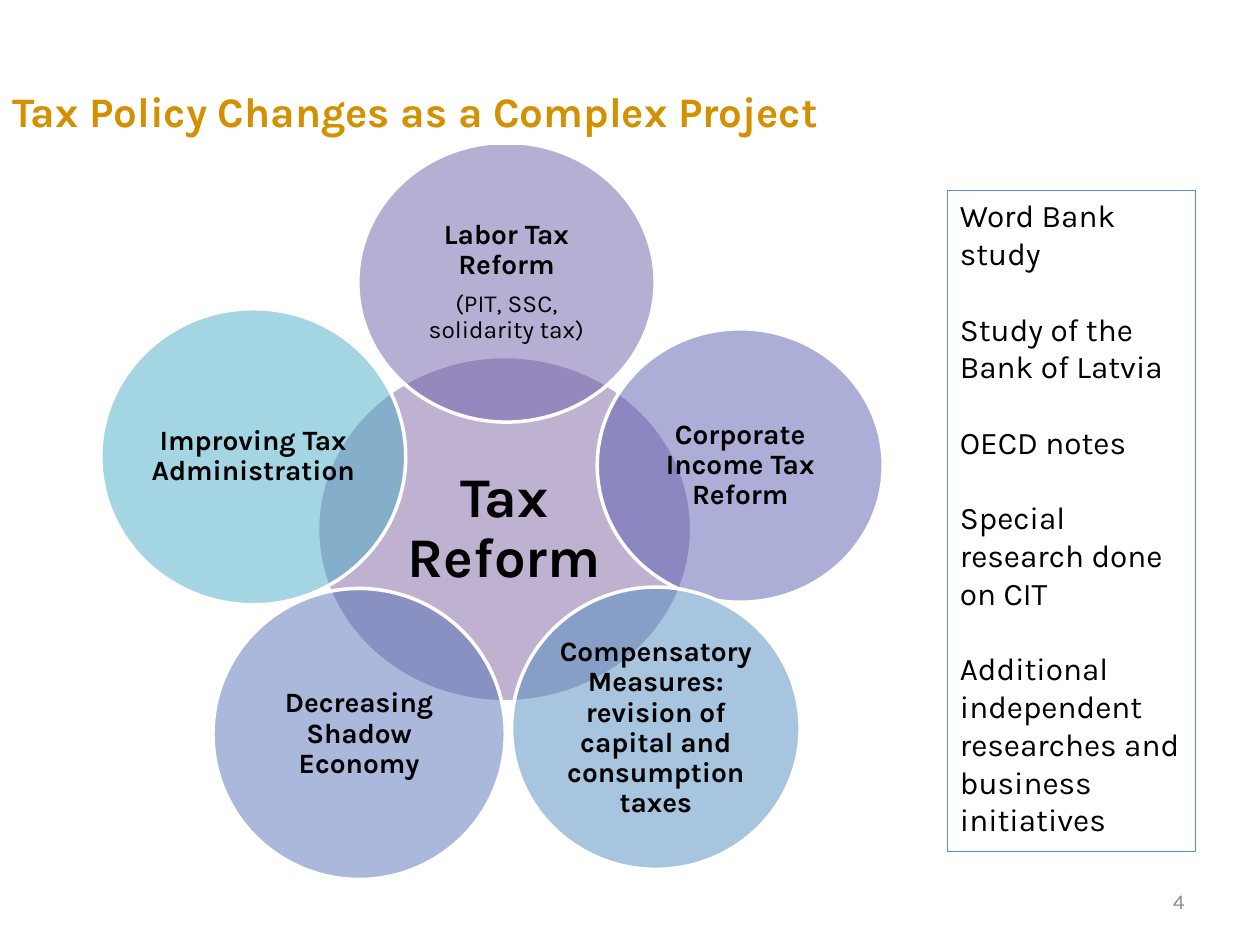
from dataclasses import dataclass

from pptx import Presentation, util as u
from pptx.dml.color import RGBColor
from pptx.enum import shapes, text
from pptx.oxml.ns import qn
from lxml import etree


@dataclass(frozen=True)
class Theme:
    font: str = "Karla"
    black: str = "000000"
    white: str = "FFFFFF"
    gold: str = "D39001"
    grey: str = "8C8C8C"
    border: str = "558ED5"
    title_size: int = 24
    center_size: int = 32
    petal_size: int = 16
    detail_size: int = 14
    sidebar_size: int = 18
    number_size: int = 12


theme = Theme()
LEFT, CENTER, RIGHT = text.PP_ALIGN.LEFT, text.PP_ALIGN.CENTER, text.PP_ALIGN.RIGHT
MIDDLE = text.MSO_ANCHOR.MIDDLE


def write(shape, lines, color, frame_format, paragraph_format):
    """Fill a shape with (wording, size, bold) lines."""
    frame = shape.text_frame
    for name, value in {"word_wrap": True, **frame_format}.items():
        setattr(frame, name, value)
    for index, (wording, size, bold) in enumerate(lines):
        paragraph = frame.paragraphs[0] if index == 0 else frame.add_paragraph()
        paragraph.text = wording
        for name, value in paragraph_format.items():
            if index or name != "space_before":
                setattr(paragraph, name, value)
        font_format = {"name": theme.font, "size": u.Pt(size), "bold": bold}
        for name, value in font_format.items():
            setattr(paragraph.font, name, value)
        paragraph.font.color.rgb = RGBColor.from_string(color)


def add_circle(group, place, color, lines, inset):
    """Add a half-transparent ellipse with centred text."""
    circle = group.shapes.add_shape(shapes.MSO_SHAPE.OVAL, *map(u.Inches, place))
    circle.shadow.inherit = False
    circle.fill.solid()
    circle.fill.fore_color.rgb = RGBColor.from_string(color)
    fill_color = circle.fill._xPr.find(qn("a:solidFill"))[0]
    etree.SubElement(fill_color, qn("a:alpha")).set("val", "50000")
    circle.line.color.rgb = RGBColor.from_string(theme.white)
    circle.line.width = u.Pt(2)
    sides = ("margin_left", "margin_top", "margin_right", "margin_bottom")
    frame_format = {"vertical_anchor": MIDDLE, **dict.fromkeys(sides, u.Inches(inset))}
    write(circle, lines, color=theme.black, frame_format=frame_format,
          paragraph_format={"alignment": CENTER, "line_spacing": 0.9, "space_after": u.Pt(5.6)})


presentation = Presentation()
presentation.slide_width, presentation.slide_height = u.Inches(10), u.Inches(7.5)
slide = presentation.slides.add_slide(presentation.slide_layouts[6])

# Slide number
number = slide.shapes.add_textbox(*map(u.Inches, (7.17, 6.95, 2.33, 0.4)))
write(number, [("4", theme.number_size, False)], theme.grey,
      {"vertical_anchor": MIDDLE}, {"alignment": RIGHT})

# Central circle and its five petals
diagram = slide.shapes.add_group_shape()
add_circle(diagram, (2.52, 2.83, 2.97, 2.74), "8064A2",
           [("Tax Reform", theme.center_size, True)], 0.04)
petals = [
    ((2.84, 1.13, 2.36, 2.22), "6E5FA9", "Labor Tax Reform", "(PIT, SSC, solidarity tax)"),
    ((4.74, 2.61, 2.27, 2.17), "5A5EB1", "Corporate Income Tax Reform", None),
    ((1.69, 4.67, 2.32, 2.31), "5572B8", "Decreasing Shadow Economy", None),
    ((4.06, 4.66, 2.29, 2.24), "508CBF",
     "Compensatory Measures: revision of capital and consumption taxes", None),
    ((0.8, 2.45, 2.42, 2.35), "4BACC6", "Improving Tax Administration", None),
]
for place, color, heading, detail in petals:
    lines = [(heading, theme.petal_size, True)]
    if detail:
        lines.append((detail, theme.detail_size, False))
    add_circle(diagram, place, color, lines, 0.02)

# Title
title = slide.shapes.add_textbox(*map(u.Inches, (0, 0.61, 6.89, 0.54)))
title.fill.solid()
title.fill.fore_color.rgb = RGBColor.from_string(theme.white)
write(title, [("Tax Policy Changes as a Complex Project", theme.title_size, True)],
      theme.gold, {"vertical_anchor": MIDDLE}, {"alignment": LEFT})

# Sidebar with the supporting studies
sidebar = slide.shapes.add_textbox(*map(u.Inches, (7.52, 1.51, 1.97, 5.25)))
sidebar.line.color.rgb = RGBColor.from_string(theme.border)
sidebar.line.width = u.Pt(0.75)
studies = [
    "Word Bank study",
    "Study of the Bank of Latvia",
    "OECD notes",
    "Special research done on CIT",
    "Additional independent researches and business initiatives",
]
write(sidebar, [(study, theme.sidebar_size, False) for study in studies], theme.black,
      {"auto_size": text.MSO_AUTO_SIZE.SHAPE_TO_FIT_TEXT},
      {"alignment": LEFT, "space_before": u.Pt(21.5)})

presentation.save("out.pptx")
